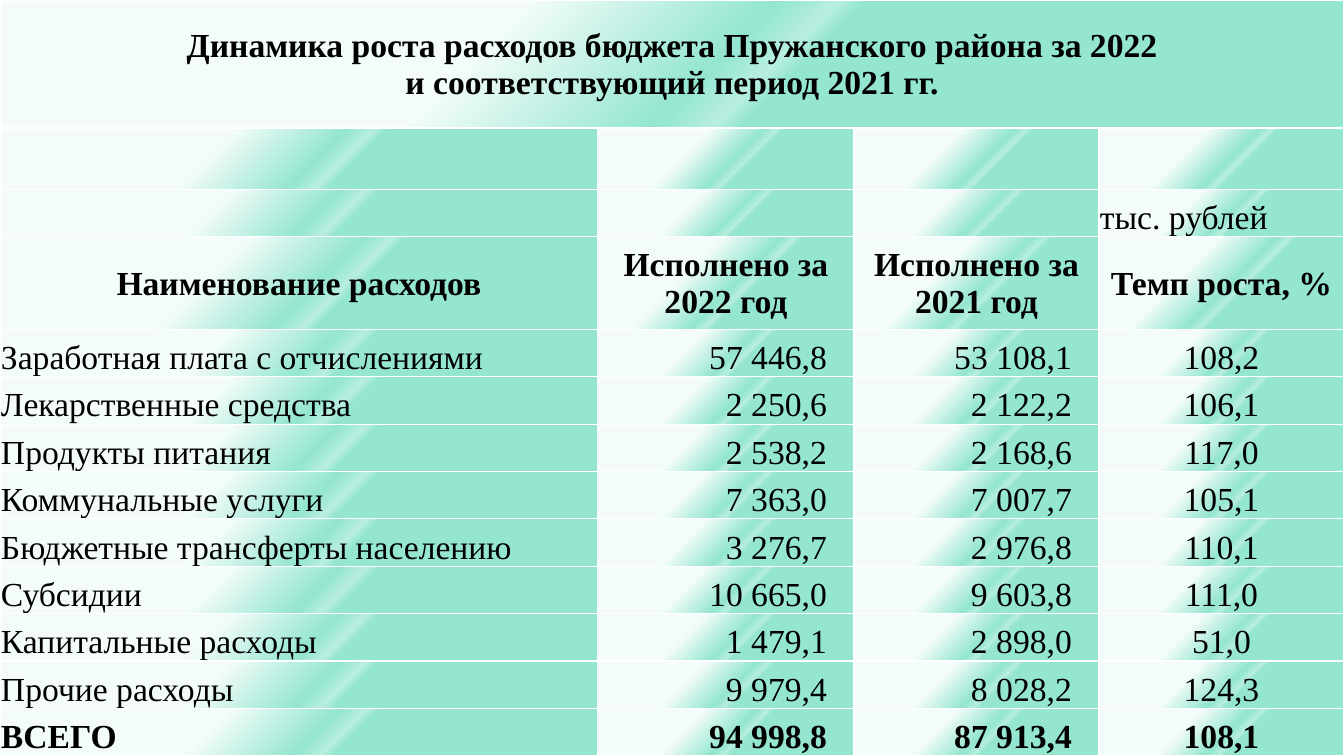
from copy import deepcopy

from lxml import etree
from pptx import Presentation
from pptx.dml.color import RGBColor
from pptx.enum.text import MSO_ANCHOR, PP_ALIGN
from pptx.oxml.ns import qn
from pptx.util import Inches, Pt

LEFT, MID, RIGHT = PP_ALIGN.LEFT, PP_ALIGN.CENTER, PP_ALIGN.RIGHT
CENTRE, BASE = MSO_ANCHOR.MIDDLE, MSO_ANCHOR.BOTTOM
BLACK = RGBColor(0x00, 0x00, 0x00)
PALE = RGBColor(0xF3, 0xFC, 0xFA)
MINT = RGBColor(0x94, 0xE6, 0xD0)
GLINT = RGBColor(0xB8, 0xEE, 0xE0)
STOPS = [(0.36, PALE), (0.53, MINT), (0.57, GLINT), (0.59, MINT)]
FONT = "Times New Roman"
WIDE, HIGH = 13.33, 7.5
COLS = [5.93, 2.54, 2.43, 2.43]
LINE = 0.47
ROWS = [1.27, 0.61, LINE, 0.92] + [LINE] * 9
PAD, INDENT = 0.01, 0.27

TITLE = ("Динамика роста расходов бюджета Пружанского района за 2022\n"
         "и соответствующий период 2021 гг.")
HEADS = ["Наименование расходов", "Исполнено за 2022 год",
         "Исполнено за 2021 год", "Темп роста, %"]
COSTS = [
    ("Заработная плата с отчислениями", "57 446,8", "53 108,1", "108,2"),
    ("Лекарственные средства", "2 250,6", "2 122,2", "106,1"),
    ("Продукты питания", "2 538,2", "2 168,6", "117,0"),
    ("Коммунальные услуги", "7 363,0", "7 007,7", "105,1"),
    ("Бюджетные трансферты населению", "3 276,7", "2 976,8", "110,1"),
    ("Субсидии", "10 665,0", "9 603,8", "111,0"),
    ("Капитальные расходы", "1 479,1", "2 898,0", "51,0"),
    ("Прочие расходы", "9 979,4", "8 028,2", "124,3"),
    ("ВСЕГО", "94 998,8", "87 913,4", "108,1"),
]


def paint(fill, node):
    """Give a fill, held in the XML node, the glossy mint gradient."""
    fill.gradient()
    fill.gradient_angle = 315
    group = next(node.iter(qn("a:gsLst")))
    while len(group) < len(STOPS):
        group.append(deepcopy(group[0]))
    for stop, (place, tint) in zip(fill.gradient_stops, STOPS):
        stop.position = place
        stop.color.rgb = tint


def write(cell, text, align=LEFT, anchor=BASE, bold=False, indent=PAD):
    cell.text = text
    cell.vertical_anchor = anchor
    cell.margin_left = cell.margin_top = Inches(PAD)
    cell.margin_right = Inches(indent)
    cell.margin_bottom = 0
    for para in cell.text_frame.paragraphs:
        para.alignment = align
        for run in para.runs:
            font = run.font
            font.name, font.size, font.bold = FONT, Pt(24), bold
            font.color.rgb = BLACK


deck = Presentation()
deck.slide_width, deck.slide_height = Inches(WIDE), Inches(HIGH)
slide = deck.slides.add_slide(deck.slide_layouts[6])
paint(slide.background.fill, slide._element)

table = slide.shapes.add_table(
    len(ROWS), len(COLS), 0, 0, Inches(WIDE), Inches(HIGH)).table
table.first_row = table.horz_banding = False
for col, width in zip(table.columns, COLS):
    col.width = Inches(width)
for row, height in zip(table.rows, ROWS):
    row.height = Inches(height)

for cell in table.iter_cells():
    paint(cell.fill, cell._tc)
    props = cell._tc.get_or_add_tcPr()
    for spot, side in enumerate(("lnL", "lnR", "lnT", "lnB")):
        edge = etree.Element(qn(f"a:{side}"), w=str(Pt(1)))
        solid = etree.SubElement(edge, qn("a:solidFill"))
        etree.SubElement(solid, qn("a:srgbClr"), val="FFFFFF")
        props.insert(spot, edge)

table.cell(0, 0).merge(table.cell(0, 3))
write(table.cell(0, 0), TITLE, align=MID, anchor=CENTRE, bold=True)
write(table.cell(2, 3), "тыс. рублей")
for c, head in enumerate(HEADS):
    write(table.cell(3, c), head, align=MID, anchor=CENTRE, bold=True)

FORMS = [(LEFT, PAD), (RIGHT, INDENT), (RIGHT, INDENT), (MID, PAD)]
for r, cost in enumerate(COSTS, 4):
    for c, (text, (align, indent)) in enumerate(zip(cost, FORMS)):
        write(table.cell(r, c), text, align=align, indent=indent,
              bold=cost is COSTS[-1])

deck.save("out.pptx")
